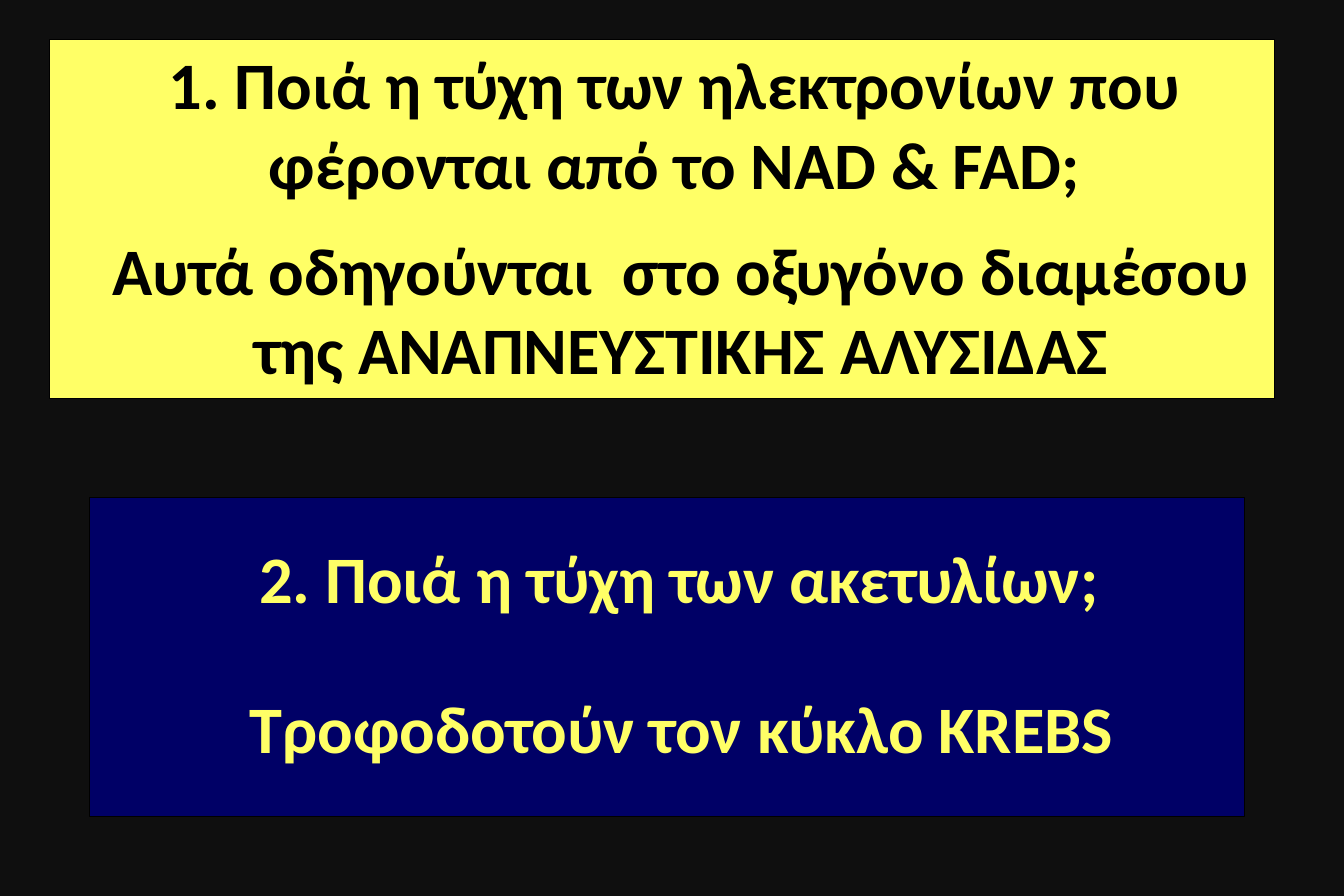
import pptx
import pptx.dml.color
import pptx.enum.shapes
import pptx.enum.text
import pptx.util

CELL = 1 / 12  # grid unit in inches: 135 columns by 90 rows
COLUMNS, ROWS = 135, 90
BLACK, YELLOW, NAVY = "000000", "FFFF66", "000066"


def grid(*cells):
    return [pptx.util.Inches(cell * CELL) for cell in cells]


def color(hex_string):
    return pptx.dml.color.RGBColor.from_string(hex_string)


def add_panel(slide, area, fill):
    panel = slide.shapes.add_shape(pptx.enum.shapes.MSO_SHAPE.RECTANGLE, *grid(*area))
    panel.shadow.inherit = False
    panel.fill.solid()
    panel.fill.fore_color.rgb = color(fill)
    panel.line.color.rgb = color(BLACK)
    panel.line.width = pptx.util.Pt(0.75)


def add_statement(slide, area, text, text_color):
    """Add a bold, centred line of text that wraps inside the area."""
    box = slide.shapes.add_textbox(*grid(*area))
    box.text_frame.word_wrap = True
    paragraph = box.text_frame.paragraphs[0]
    paragraph.alignment = pptx.enum.text.PP_ALIGN.CENTER
    run = paragraph.add_run()
    run.text = text
    run.font.name = "Calibri"
    run.font.size = pptx.util.Pt(40)
    run.font.bold = True
    run.font.color.rgb = color(text_color)


def main():
    presentation = pptx.Presentation()
    presentation.slide_width, presentation.slide_height = grid(COLUMNS, ROWS)
    slide = presentation.slides.add_slide(presentation.slide_layouts[6])
    slide.background.fill.solid()
    slide.background.fill.fore_color.rgb = color("0F0F0F")

    add_panel(slide, (9, 50, 116, 32), NAVY)
    add_panel(slide, (5, 4, 123, 36), YELLOW)
    add_statement(slide, (14, 3.75, 107.5, 17.4),
                  "1. Ποιά η τύχη των ηλεκτρονίων που φέρονται από το NAD & FAD;", BLACK)
    add_statement(slide, (24.4, 53.4, 87.6, 9.25), "2. Ποιά η τύχη των ακετυλίων;", YELLOW)
    add_statement(slide, (8.4, 22.4, 120, 17.4),
                  "Αυτά οδηγούνται  στο οξυγόνο διαμέσου της ΑΝΑΠΝΕΥΣΤΙΚΗΣ ΑΛΥΣΙΔΑΣ", BLACK)
    add_statement(slide, (23.4, 68.4, 90.1, 9.25), "Τροφοδοτούν τον κύκλο ΚREBS", YELLOW)
    presentation.save("out.pptx")


if __name__ == "__main__":
    main()
